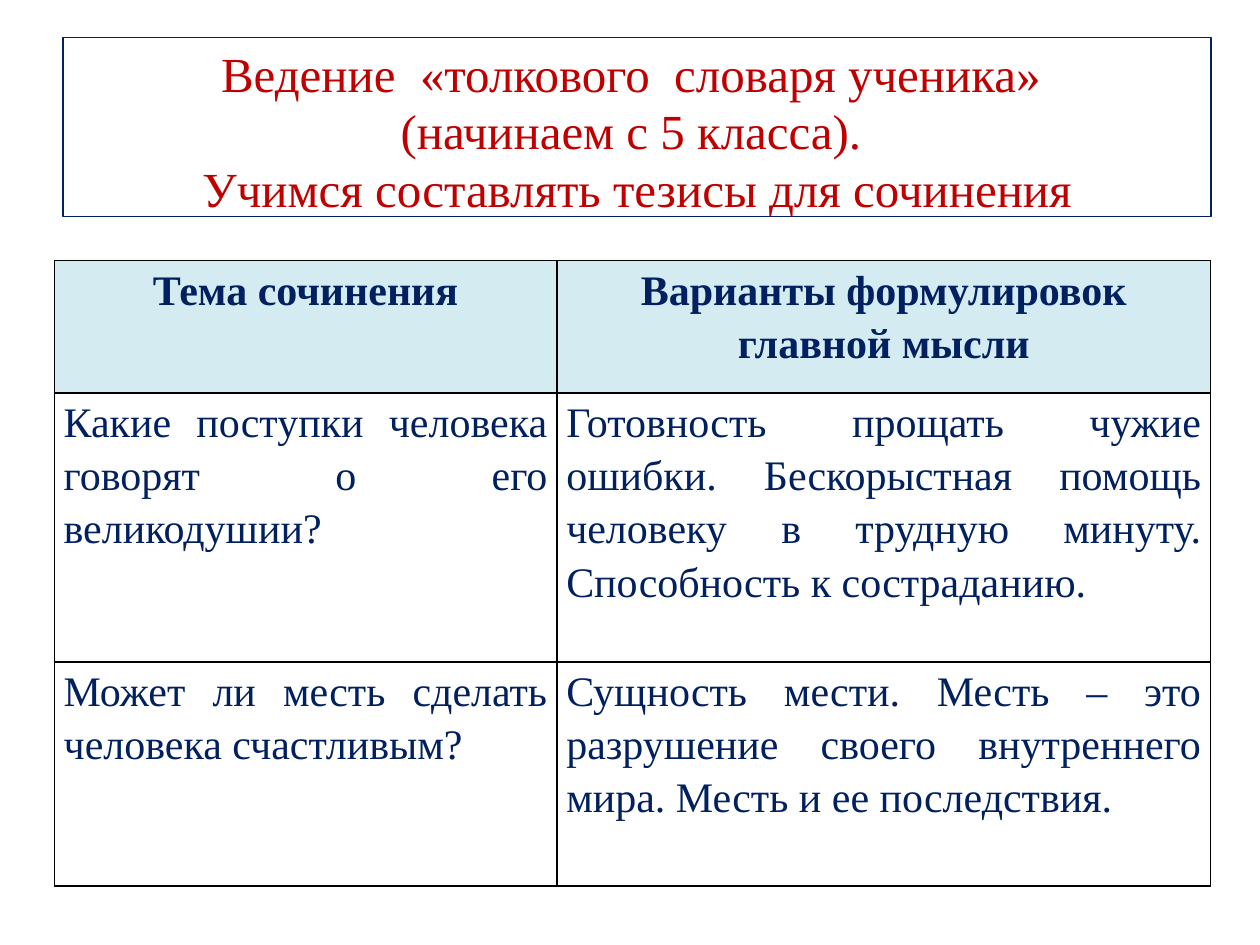
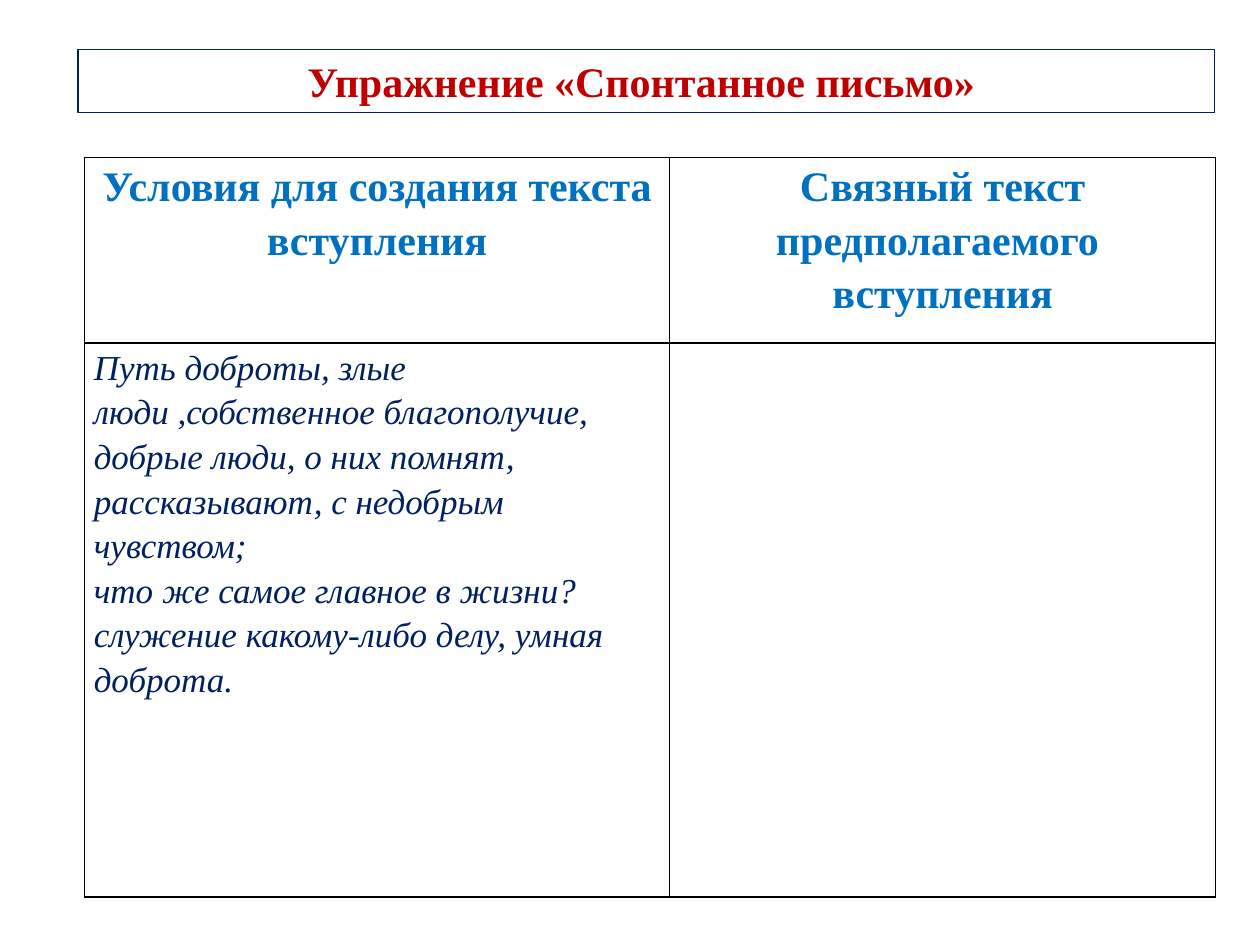
import pptx
import pptx.util
import pptx.dml.color
import pptx.enum.text
import pptx.oxml
from pptx.oxml.ns import qn

Pt = pptx.util.Pt
RGBColor = pptx.dml.color.RGBColor
ALIGN = pptx.enum.text.PP_ALIGN
ANCHOR = pptx.enum.text.MSO_ANCHOR

FONT = "Times New Roman"
NAVY = RGBColor(0x00, 0x20, 0x60)
RED = RGBColor(0xC0, 0x00, 0x00)
BLUE = RGBColor(0x00, 0x70, 0xC0)
PALE = RGBColor(0xD4, 0xEB, 0xF1)
BLACK = RGBColor(0x00, 0x00, 0x00)

SLIDES = [
    {
        "title": ["Ведение  «толкового  словаря ученика» ", "(начинаем с 5 класса). ",
                  "Учимся составлять тезисы для сочинения"],
        "title_box": (36, 21.6, 656, 102),
        "title_style": {"size": 28, "color": RED},
        "title_spacing": Pt(33),
        "table_at": (31, 149),
        "columns": [287.2, 373.6],
        "rows": [75.5, 153.7, 128],
        "header": ["Тема сочинения", "Варианты формулировок главной мысли"],
        "header_style": {"size": 24, "color": NAVY, "bold": True},
        "header_fill": PALE,
        "body": [
            [["Какие поступки человека говорят о его великодушии?"],
             ["Готовность прощать чужие ошибки. Бескорыстная помощь человеку "
              "в трудную минуту. Способность к состраданию."]],
            [["Может ли месть сделать человека счастливым?"],
             ["Сущность мести. Месть – это разрушение своего внутреннего мира. "
              "Месть и ее последствия."]],
        ],
        "body_style": {"size": 24, "color": NAVY},
        "body_align": ALIGN.JUSTIFY,
    },
    {
        "title": ["Упражнение «Спонтанное письмо» "],
        "title_box": (44.6, 28.2, 649.6, 36),
        "title_style": {"size": 24, "color": RED, "bold": True},
        "title_spacing": None,
        "table_at": (48.2, 90),
        "columns": [334.5, 312],
        "rows": [106, 316.6],
        "header": ["Условия для создания текста вступления",
                   "Связный текст предполагаемого  вступления"],
        "header_style": {"size": 24, "color": BLUE, "bold": True},
        "header_fill": None,
        "body": [
            [["Путь доброты, злые люди ,собственное благополучие, добрые люди, "
              "о них помнят, рассказывают, с недобрым чувством;",
              "что же самое главное в жизни?",
              "служение какому-либо делу, умная доброта."],
             []],
        ],
        "body_style": {"size": 20, "color": NAVY, "italic": True},
        "body_align": ALIGN.LEFT,
    },
]


def add_span(para, text, size, color, bold=False, italic=False):
    """Append one formatted run to a paragraph."""
    span = para.add_run()
    span.text = text
    font = span.font
    font.name, font.size, font.bold, font.italic = FONT, Pt(size), bold, italic
    font.color.rgb = color


def add_title(page, content):
    """Put the framed title on the slide."""
    box = page.shapes.title
    box.left, box.top, box.width, box.height = map(Pt, content["title_box"])
    box.fill.background()
    box.line.color.rgb = NAVY
    box.line.width = Pt(0.75)
    frame = box.text_frame
    frame.word_wrap = True
    frame.auto_size = pptx.enum.text.MSO_AUTO_SIZE.NONE
    frame.vertical_anchor = ANCHOR.TOP
    para = frame.paragraphs[0]
    para.alignment = ALIGN.CENTER
    para.line_spacing = content["title_spacing"]
    style = content["title_style"]
    for index, line in enumerate(content["title"]):
        if index:
            para.add_line_break()
        add_span(para, line, **style)
    for line_break in para._p.findall(qn("a:br")):
        pptx.oxml.xmlchemy.OxmlElement("a:rPr")
        properties = pptx.oxml.xmlchemy.OxmlElement("a:rPr")
        properties.set("sz", str(style["size"] * 100))
        line_break.append(properties)


def add_borders(cell):
    """Draw a black one-point line on each side of a cell."""
    properties = cell._tc.get_or_add_tcPr()
    for side in ("a:lnL", "a:lnR", "a:lnT", "a:lnB"):
        line = pptx.oxml.xmlchemy.OxmlElement(side)
        line.set("w", str(Pt(1)))
        fill = pptx.oxml.xmlchemy.OxmlElement("a:solidFill")
        color = pptx.oxml.xmlchemy.OxmlElement("a:srgbClr")
        color.set("val", str(BLACK))
        fill.append(color)
        line.append(fill)
        properties.append(line)


def fill_cell(cell, texts, style, align, fill):
    """Format a cell and write its paragraphs."""
    cell.margin_left = cell.margin_right = Pt(5.4)
    cell.margin_top = cell.margin_bottom = 0
    add_borders(cell)
    if fill is None:
        cell.fill.background()
    else:
        cell.fill.solid()
        cell.fill.fore_color.rgb = fill
    frame = cell.text_frame
    for index, text in enumerate(texts):
        para = frame.add_paragraph() if index else frame.paragraphs[0]
        para.alignment = align
        para.line_spacing = 1.15
        add_span(para, text, **style)


def add_grid(page, content):
    """Build the two-column table under the title."""
    columns, rows = content["columns"], content["rows"]
    left, top = content["table_at"]
    table = page.shapes.add_table(len(rows), len(columns), Pt(left), Pt(top),
                                  Pt(sum(columns)), Pt(sum(rows))).table
    table.first_row = table.horz_banding = False
    for column, width in zip(table.columns, columns):
        column.width = Pt(width)
    for row, height in zip(table.rows, rows):
        row.height = Pt(height)
    for cell, text in zip(table.rows[0].cells, content["header"]):
        fill_cell(cell, [text], content["header_style"], ALIGN.CENTER, content["header_fill"])
    for row_index, row_texts in enumerate(content["body"], start=1):
        for cell, texts in zip(table.rows[row_index].cells, row_texts):
            fill_cell(cell, texts, content["body_style"], content["body_align"], None)


def main():
    """Build and save the deck."""
    deck = pptx.Presentation()
    deck.slide_width, deck.slide_height = Pt(720), Pt(540)
    title_only = deck.slide_layouts[5]
    for content in SLIDES:
        page = deck.slides.add_slide(title_only)
        add_title(page, content)
        add_grid(page, content)
    deck.save("out.pptx")


if __name__ == "__main__":
    main()
